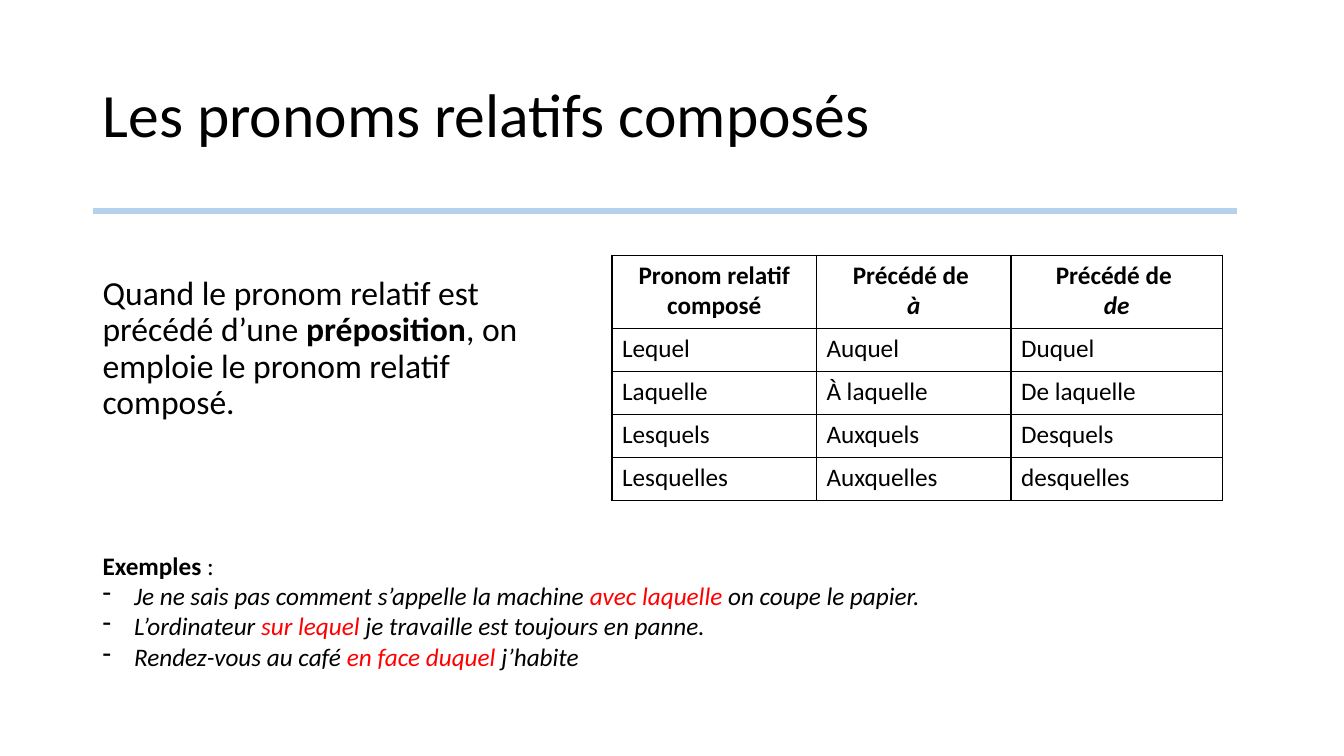
from dataclasses import dataclass

from lxml import etree
from pptx import Presentation
from pptx.dml.color import RGBColor
from pptx.enum.shapes import MSO_CONNECTOR
from pptx.enum.text import MSO_ANCHOR, PP_ALIGN
from pptx.oxml.ns import qn
from pptx.slide import Slide
from pptx.table import _Cell
from pptx.text.text import TextFrame, _Paragraph
from pptx.util import Pt

STRAIGHT = MSO_CONNECTOR.STRAIGHT
MIDDLE, TOP = MSO_ANCHOR.MIDDLE, MSO_ANCHOR.TOP
LEFT, CENTER = PP_ALIGN.LEFT, PP_ALIGN.CENTER


@dataclass(frozen=True)
class Theme:
    font: str = "Calibri"
    ink: str = "000000"
    accent: str = "FF0000"
    paper: str = "FFFFFF"
    rule: str = "B5D2EC"
    title_size: float = 44
    body_size: float = 24
    small_size: float = 18
    rule_width: float = 4.5
    border_width: float = 1


@dataclass(frozen=True)
class Span:
    text: str
    bold: bool = False
    italic: bool = False
    color: str = Theme.ink


@dataclass(frozen=True)
class Area:
    left: float
    top: float
    width: float
    height: float


@dataclass(frozen=True)
class Example:
    before: str
    pronoun: str
    after: str


Para = list[Span]
THEME = Theme()
MARGIN = 66.2
TITLE = Area(MARGIN, 31.9, 828, 104.4)
RULE_TOP, RULE_RIGHT = 150.5, 883.4
BODY = Area(MARGIN, 182.2, 337, 175)
BODY_BOTTOM_INSET = 44.4
EXAMPLES = Area(MARGIN, 389.5, 812.2, 94.3)
BULLET_INDENT = 22.5
TABLE_LEFT, TABLE_TOP = 437.2, 182.2
COLUMN_WIDTHS = [146, 139, 151]
HEADER_HEIGHT, ROW_HEIGHT = 52.2, 30.85

HEADERS: list[list[Para]] = [
    [[Span("Pronom relatif composé", bold=True)]],
    [[Span("Précédé de ", bold=True)], [Span("à", bold=True, italic=True)]],
    [[Span("Précédé de ", bold=True)], [Span("de", bold=True, italic=True)]],
]
PRONOUNS = [
    ["Lequel", "Auquel", "Duquel"],
    ["Laquelle", "À laquelle", "De laquelle"],
    ["Lesquels", "Auxquels", "Desquels"],
    ["Lesquelles", "Auxquelles", "desquelles"],
]
SENTENCES = [
    Example("Je ne sais pas comment s’appelle la machine ", "avec laquelle ", "on coupe le papier."),
    Example("L’ordinateur ", "sur lequel ", "je travaille est toujours en panne."),
    Example("Rendez-vous au café ", "en face duquel ", "j’habite"),
]


def set_bullet(para: _Paragraph) -> None:
    """Give a paragraph a hanging dash."""
    properties = para._p.get_or_add_pPr()
    indent = Pt(BULLET_INDENT)
    properties.set("marL", str(indent))
    properties.set("indent", str(-indent))
    etree.SubElement(properties, qn("a:buChar"), char="-")


def write_text(
    frame: TextFrame,
    paras: list[Para],
    *,
    size: float,
    align: PP_ALIGN = LEFT,
    line_spacing: float = 1.0,
    space_before: float = 0,
    bullets_from: int | None = None,
) -> None:
    """Fill a text frame with formatted paragraphs."""
    for index, spans in enumerate(paras):
        para = frame.paragraphs[0] if index == 0 else frame.add_paragraph()
        para.alignment = align
        para.line_spacing = line_spacing
        para.space_before = Pt(space_before)
        if bullets_from is not None and index >= bullets_from:
            set_bullet(para)
        for span in spans:
            run = para.add_run()
            run.text = span.text
            run.font.name = THEME.font
            run.font.size = Pt(size)
            run.font.bold = span.bold
            run.font.italic = span.italic
            run.font.color.rgb = RGBColor.from_string(span.color)


def add_box(page: Slide, area: Area, anchor: MSO_ANCHOR = TOP) -> TextFrame:
    """Add a wrapping text box and return its frame."""
    box = page.shapes.add_textbox(Pt(area.left), Pt(area.top), Pt(area.width), Pt(area.height))
    frame = box.text_frame
    frame.word_wrap = True
    frame.vertical_anchor = anchor
    return frame


def add_rule(page: Slide) -> None:
    """Draw the rule under the title."""
    rule = page.shapes.add_connector(STRAIGHT, Pt(MARGIN), Pt(RULE_TOP), Pt(RULE_RIGHT), Pt(RULE_TOP))
    rule.line.color.rgb = RGBColor.from_string(THEME.rule)
    rule.line.width = Pt(THEME.rule_width)
    etree.SubElement(rule._element.spPr, qn("a:effectLst"))


def style_cell(cell: _Cell) -> None:
    """Give a cell its borders and fill."""
    properties = cell._tc.get_or_add_tcPr()
    for side in ("lnL", "lnR", "lnT", "lnB"):
        border = etree.SubElement(properties, qn(f"a:{side}"), w=str(Pt(THEME.border_width)))
        fill = etree.SubElement(border, qn("a:solidFill"))
        etree.SubElement(fill, qn("a:srgbClr"), val=THEME.ink)
    cell.fill.solid()
    cell.fill.fore_color.rgb = RGBColor.from_string(THEME.paper)


def add_pronoun_table(page: Slide) -> None:
    """Add the table of compound relative pronouns."""
    rows = [HEADERS] + [[[[Span(word)]] for word in row] for row in PRONOUNS]
    heights = [HEADER_HEIGHT] + [ROW_HEIGHT] * len(PRONOUNS)
    table = page.shapes.add_table(
        len(rows), len(COLUMN_WIDTHS), Pt(TABLE_LEFT), Pt(TABLE_TOP), Pt(sum(COLUMN_WIDTHS)), Pt(sum(heights))
    ).table
    for column, width in zip(table.columns, COLUMN_WIDTHS):
        column.width = Pt(width)
    for row_index, (row, height) in enumerate(zip(rows, heights)):
        table.rows[row_index].height = Pt(height)
        for column_index, paras in enumerate(row):
            cell = table.cell(row_index, column_index)
            style_cell(cell)
            write_text(cell.text_frame, paras, size=THEME.small_size, align=LEFT if row_index else CENTER)


def main() -> None:
    """Build the slide and save the deck."""
    deck = Presentation()
    deck.slide_width, deck.slide_height = Pt(960), Pt(540)
    page = deck.slides.add_slide(deck.slide_layouts[6])

    title = add_box(page, TITLE, MIDDLE)
    write_text(title, [[Span("Les pronoms relatifs composés")]], size=THEME.title_size, line_spacing=0.9)

    body = add_box(page, BODY, MIDDLE)
    body.margin_bottom = Pt(BODY_BOTTOM_INSET)
    explanation = [
        Span("Quand le pronom relatif est précédé d’une "),
        Span("préposition", bold=True),
        Span(", on emploie le pronom relatif composé."),
    ]
    write_text(body, [explanation], size=THEME.body_size, line_spacing=0.9, space_before=10)

    add_pronoun_table(page)
    add_rule(page)

    examples = [[Span("Exemples", bold=True), Span(" :")]] + [
        [
            Span(sentence.before, italic=True),
            Span(sentence.pronoun, italic=True, color=THEME.accent),
            Span(sentence.after, italic=True),
        ]
        for sentence in SENTENCES
    ]
    write_text(add_box(page, EXAMPLES), examples, size=THEME.small_size, bullets_from=1)
    deck.save("out.pptx")


if __name__ == "__main__":
    main()
